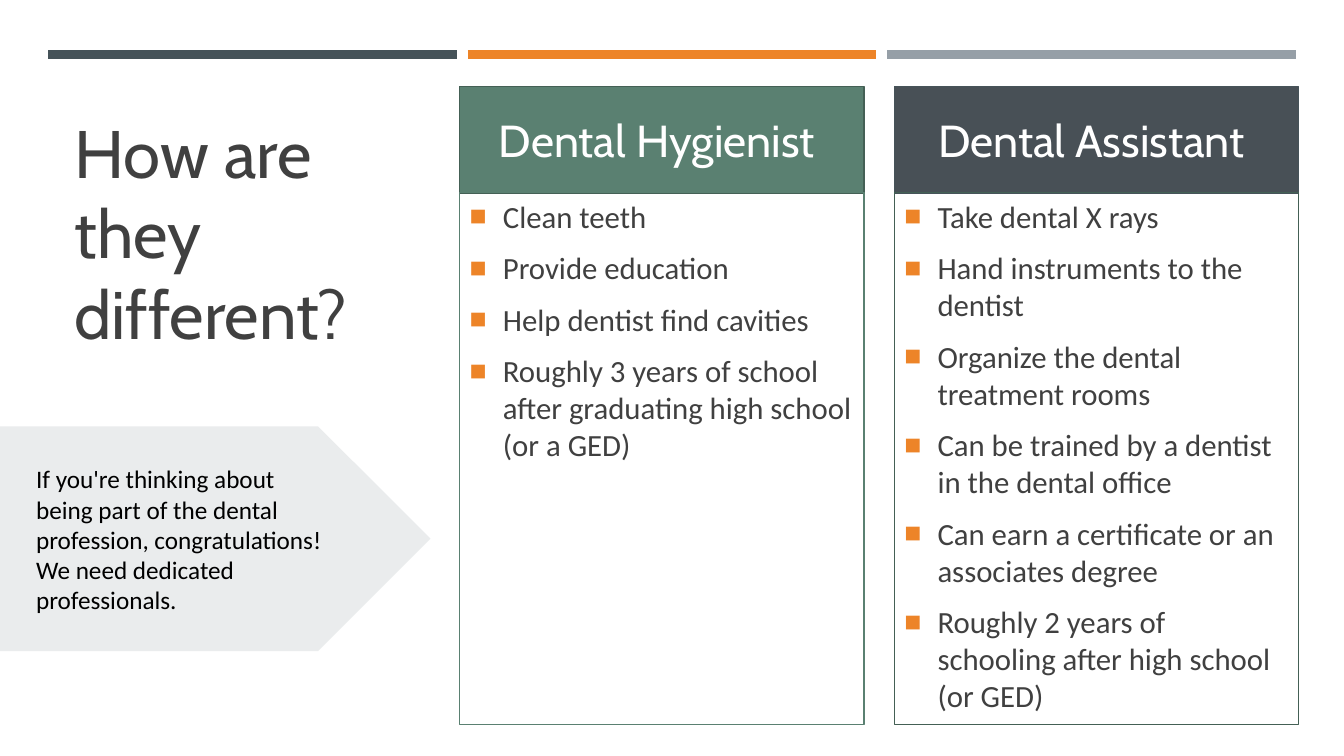
"""Build a slide comparing dental hygienists with dental assistants."""
from lxml import etree
from pptx import Presentation
from pptx.dml.color import RGBColor
from pptx.enum.shapes import MSO_CONNECTOR, MSO_SHAPE
from pptx.enum.text import MSO_ANCHOR, PP_ALIGN
from pptx.oxml.ns import qn
from pptx.util import Inches, Pt

STRAIGHT = MSO_CONNECTOR.STRAIGHT
RECTANGLE, PENTAGON = MSO_SHAPE.RECTANGLE, MSO_SHAPE.PENTAGON
TOP, MIDDLE, BOTTOM = MSO_ANCHOR.TOP, MSO_ANCHOR.MIDDLE, MSO_ANCHOR.BOTTOM
LEFT, CENTER = PP_ALIGN.LEFT, PP_ALIGN.CENTER

ORANGE = RGBColor(0xED, 0x84, 0x28)
GRAY = RGBColor(0x96, 0x9F, 0xA7)
SLATE = RGBColor(0x46, 0x53, 0x59)
CHARCOAL = RGBColor(0x48, 0x50, 0x56)
GREEN = RGBColor(0x5A, 0x80, 0x71)
DARK_GREEN = RGBColor(0x44, 0x60, 0x55)
PALE = RGBColor(0xEA, 0xEC, 0xED)
TEXT = RGBColor(0x40, 0x40, 0x40)
BLACK = RGBColor(0, 0, 0)
WHITE = RGBColor(0xFF, 0xFF, 0xFF)


def write(shape, lines, font, size, color, anchor=TOP, align=LEFT, bullets=False):
    """Fill a shape with paragraphs in one style."""
    frame = shape.text_frame
    frame.word_wrap = True
    frame.vertical_anchor = anchor
    frame.text = "\n".join(lines)
    for index, paragraph in enumerate(frame.paragraphs):
        paragraph.alignment = align
        if bullets:
            paragraph.space_before = Pt(4.4 if index else 0)
            paragraph.space_after = Pt(6)
            properties = paragraph._p.get_or_add_pPr()
            properties.set("marL", str(Inches(0.33)))
            properties.set("indent", str(-Inches(0.33)))
            bullet_color = etree.SubElement(properties, qn("a:buClr"))
            etree.SubElement(bullet_color, qn("a:srgbClr"), val=str(ORANGE))
            etree.SubElement(properties, qn("a:buSzPct"), val="92000")
            etree.SubElement(properties, qn("a:buFont"), typeface="Arial")
            etree.SubElement(properties, qn("a:buChar"), char="■")
        paragraph.font.name = font
        paragraph.font.size = Pt(size)
        paragraph.font.color.rgb = color


def add_box(kind, left, top, width, height, fill=None, line=None):
    """Add a flat shape with an optional fill and outline."""
    shape = slide.shapes.add_shape(
        kind, Inches(left), Inches(top), Inches(width), Inches(height))
    shape.shadow.inherit = False
    if fill is None:
        shape.fill.background()
    else:
        shape.fill.solid()
        shape.fill.fore_color.rgb = fill
    if line is None:
        shape.line.fill.background()
    else:
        shape.line.color.rgb = line
        shape.line.width = Pt(0.75)
    return shape


presentation = Presentation()
presentation.slide_width = Inches(13.33)
presentation.slide_height = Inches(7.5)
slide = presentation.slides.add_slide(presentation.slide_layouts[6])

for index, color in enumerate([SLATE, ORANGE, GRAY]):
    left = 0.48 + 4.16 * index
    bar = slide.shapes.add_connector(
        STRAIGHT, Inches(left), Inches(0.54), Inches(left + 4.05), Inches(0.54))
    bar.line.color.rgb = color
    bar.line.width = Pt(6.5)
    etree.SubElement(bar._element.spPr, qn("a:effectLst"))

add_box(PENTAGON, 0, 4.23, 4.27, 2.23, PALE)

title = slide.shapes.add_textbox(Inches(0.64), Inches(0.68), Inches(3.83), Inches(2.87))
write(title, ["How are they different?"], "Cabin", 48, TEXT, anchor=BOTTOM)

columns = [
    (4.56, "Dental Hygienist ", GREEN, DARK_GREEN, GREEN, [
        "Clean teeth",
        "Provide education",
        "Help dentist find cavities",
        "Roughly 3 years of school after graduating high school (or a GED)",
    ]),
    (8.87, "Dental Assistant ", CHARCOAL, SLATE, DARK_GREEN, [
        "Take dental X rays",
        "Hand instruments to the dentist",
        "Organize the dental treatment rooms",
        "Can be trained by a dentist in the dental office",
        "Can earn a certificate or an associates degree",
        "Roughly 2 years of schooling after high school (or GED)",
    ]),
]
for left, heading, fill, heading_line, body_line, duties in columns:
    header = add_box(RECTANGLE, left, 0.86, 4.01, 1.06, fill, heading_line)
    write(header, [heading], "Cabin", 32, WHITE, anchor=MIDDLE, align=CENTER)
    body = add_box(RECTANGLE, left, 1.91, 4.01, 5.28, line=body_line)
    write(body, duties, "Calibri", 22, TEXT, bullets=True)

note = slide.shapes.add_textbox(Inches(0.26), Inches(4.55), Inches(3.1), Inches(1.62))
write(note, [
    "If you're thinking about being part of the dental profession, congratulations!",
    "We need dedicated professionals.",
], "Calibri", 18, BLACK)

presentation.save("out.pptx")
